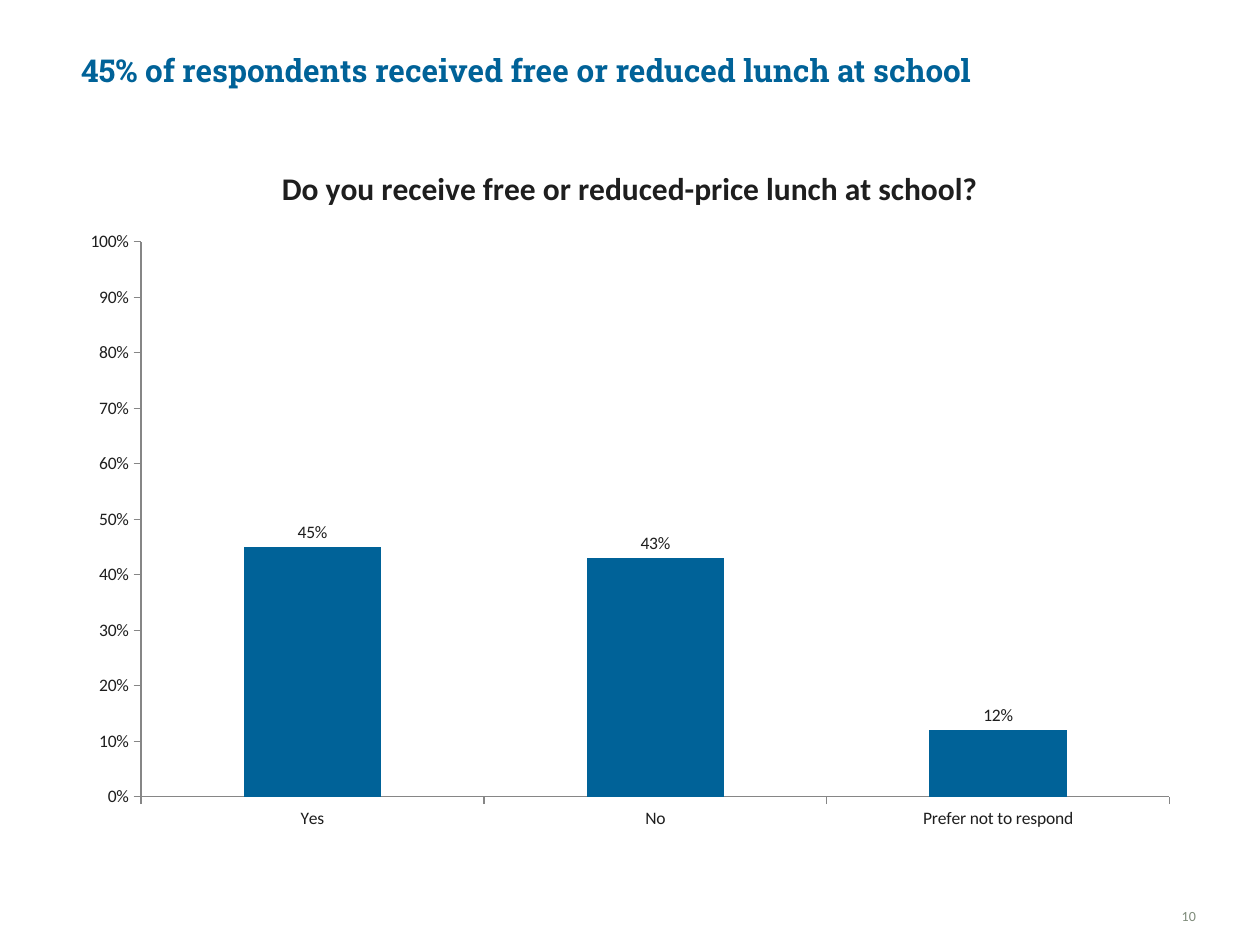
"""Build the slide on free or reduced-price school lunch."""
from pptx import Presentation
from pptx import util as u
from pptx.chart.data import CategoryChartData
from pptx.dml.color import RGBColor
from pptx.enum import chart as c
from pptx.enum import text as t

PX_PER_INCH = 126
BLUE, INK, GREY, AXIS = "006298", "1E1E1E", "7E8B7A", "868686"


def px(length):
    """Turn whole pixels into EMU."""
    return u.Emu(round(length * 914400 / PX_PER_INCH))


def color(value):
    """Turn a hex string into a colour."""
    return RGBColor.from_string(value)


def style_font(font, name, size, value, bold=False):
    """Set the face, size, colour and weight of a font."""
    font.name, font.size, font.bold = name, u.Pt(size), bold
    font.color.rgb = color(value)


def add_text(slide, box, words, font, align=t.PP_ALIGN.LEFT,
             anchor=t.MSO_ANCHOR.TOP, insets=(13, 6)):
    """Add a wrapped one-paragraph text box."""
    frame = slide.shapes.add_textbox(*map(px, box)).text_frame
    frame.word_wrap = True
    frame.vertical_anchor = anchor
    frame.margin_left = frame.margin_right = px(insets[0])
    frame.margin_top = frame.margin_bottom = px(insets[1])
    frame.text = words
    paragraph = frame.paragraphs[0]
    paragraph.alignment = align
    style_font(paragraph.runs[0].font, *font)


def style_axis(axis):
    """Give an axis a thin grey line, outside ticks and no gridlines."""
    axis.has_major_gridlines = False
    axis.major_tick_mark = c.XL_TICK_MARK.OUTSIDE
    axis.minor_tick_mark = c.XL_TICK_MARK.NONE
    axis.format.line.color.rgb = color(AXIS)
    axis.format.line.width = u.Pt(0.75)


def add_column_chart(slide, box, title, shares):
    """Add a titled column chart of percentage shares."""
    data = CategoryChartData(number_format="0%")
    data.categories = list(shares)
    data.add_series("Series 1", list(shares.values()))
    chart = slide.shapes.add_chart(
        c.XL_CHART_TYPE.COLUMN_CLUSTERED, *map(px, box), data).chart
    style_font(chart.font, "Calibri", 10, INK)
    chart.has_legend = False
    chart.has_title = True
    chart.chart_title.include_in_layout = False
    chart.chart_title.text_frame.text = title
    heading = chart.chart_title.text_frame.paragraphs[0].runs[0]
    style_font(heading.font, "Calibri", 18, INK, True)

    style_axis(chart.category_axis)
    style_axis(chart.value_axis)
    chart.value_axis.minimum_scale = 0
    chart.value_axis.maximum_scale = 1
    chart.value_axis.major_unit = 0.1
    chart.value_axis.tick_labels.number_format = "0%"
    chart.value_axis.tick_labels.number_format_is_linked = False

    plot = chart.plots[0]
    plot.gap_width = 150
    plot.vary_by_categories = False
    plot.series[0].format.fill.solid()
    plot.series[0].format.fill.fore_color.rgb = color(BLUE)
    plot.has_data_labels = True
    labels = plot.data_labels
    labels.show_value = True
    labels.number_format = "0%"
    labels.number_format_is_linked = False
    labels.position = c.XL_LABEL_POSITION.OUTSIDE_END


def main():
    """Build and save the slide."""
    presentation = Presentation()
    presentation.slide_width, presentation.slide_height = px(1260), px(945)
    slide = presentation.slides.add_slide(presentation.slide_layouts[6])
    slide.background.fill.solid()
    slide.background.fill.fore_color.rgb = color("FFFFFF")
    add_text(slide, (68, 45, 1092, 88),
             "45% of respondents received free or reduced lunch at school",
             ("Roboto Slab", 18, BLUE, True))
    add_column_chart(slide, (68, 140, 1124, 703),
                     "Do you receive free or reduced-price lunch at school?",
                     {"Yes": 0.45, "No": 0.43, "Prefer not to respond": 0.12})
    add_text(slide, (1130, 891, 66, 33), "10", ("Calibri", 8, GREY),
             t.PP_ALIGN.RIGHT, t.MSO_ANCHOR.BOTTOM, (0, 0))
    presentation.save("out.pptx")


if __name__ == "__main__":
    main()
